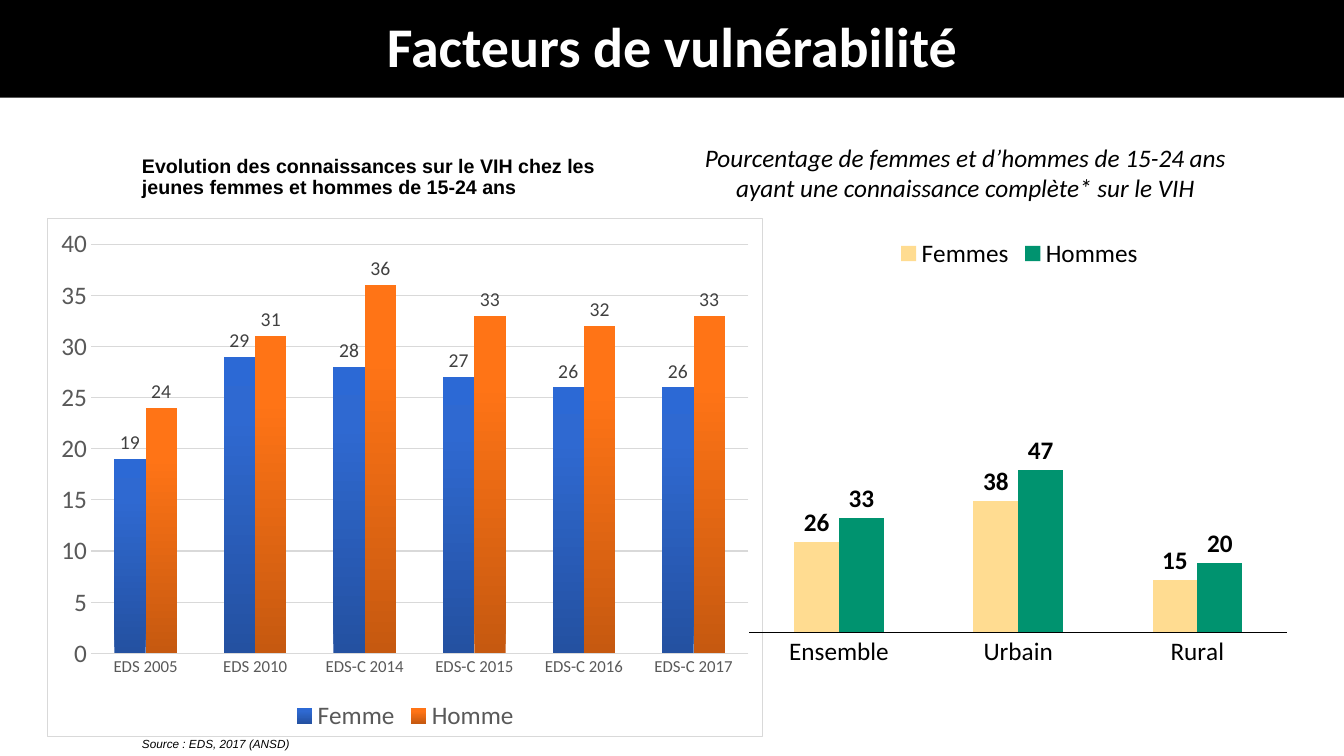
from copy import deepcopy
from pptx import Presentation
from pptx.chart.data import CategoryChartData
from pptx.dml.color import RGBColor
from pptx.enum import chart as kinds, text
from pptx.oxml import parse_xml
from pptx.oxml.ns import nsdecls
from pptx.util import Inches, Pt

TITLE = "Facteurs de vulnérabilité"
TEXTS = [
    dict(words="Evolution des connaissances sur le VIH chez les jeunes femmes et hommes de 15-24 ans",
         at=(1.31, 1.36, 5.26, 1.02), inset=0.19, size=14, font="Arial", bold=True, spacing=0.9),
    dict(words="Source\u00a0: EDS, 2017 (ANSD)", at=(1.31, 7.26, 2.28, 0.24),
         size=8.4, font="Arial", italic=True, spacing=Pt(10.1), after=5.1),
    dict(words="Pourcentage de femmes et d’hommes de 15-24 ans ayant une connaissance complète* sur le VIH",
         at=(6.75, 1.36, 5.65, 0.71), size=18, font="Calibri", italic=True, align=text.PP_ALIGN.CENTER),
]
TREND = dict(
    at=(0.47, 2.16, 7.1, 5.15), plot=(0.06, 0.05, 0.92, 0.79), gap=150, top=40,
    legend=kinds.XL_LEGEND_POSITION.BOTTOM, color="595959", category_size=12,
    axis_line=("D9D9D9", 1), label=(14, "404040", False), grid="D9D9D9",
    categories=["EDS 2005", "EDS 2010", "EDS-C 2014", "EDS-C 2015", "EDS-C 2016", "EDS-C 2017"],
    series=[("Femme", [19, 29, 28, 27, 26, 26], ["2451A1", "2F69D1", "2C69D5"]),
            ("Homme", [24, 31, 36, 33, 32, 33], ["C65910", "FF7416", "FF7517"])])
RESIDENCE = dict(
    at=(7.35, 2.24, 5.52, 4.45), plot=(0.015, 0.135, 0.966, 0.771), gap=200, top=100,
    legend=kinds.XL_LEGEND_POSITION.TOP, color="000000", category_size=18,
    axis_line=("000000", 0.75), label=(18, "000000", True), grid=None,
    categories=["Ensemble", "Urbain", "Rural"],
    series=[("Femmes", [26, 38, 15], ["FFDC91"]),
            ("Hommes", [33, 47, 20], ["00936F"])])
GRADIENT_POSITIONS = (0, 0.8, 1)


def rgb(value):
    return RGBColor.from_string(value)


def style(font, size, color, bold=False, italic=False, name="Calibri"):
    font.size, font.name, font.bold, font.italic = Pt(size), name, bold, italic
    font.color.rgb = rgb(color)


def outline(line, color, width):
    line.color.rgb = rgb(color)
    line.width = Pt(width)


def paint(series, colors):
    fill = series.format.fill
    if len(colors) == 1:
        fill.solid()
        fill.fore_color.rgb = rgb(colors[0])
        return
    fill.gradient()
    fill.gradient_angle = 90
    stops = series._element.xpath("./c:spPr/a:gradFill/a:gsLst")[0]
    stops.append(deepcopy(stops[0]))
    for stop, color, position in zip(fill.gradient_stops, colors, GRADIENT_POSITIONS):
        stop.color.rgb = rgb(color)
        stop.position = position


def place_plot(chart, fractions):
    area = chart._chartSpace.chart.plotArea
    for old in area.xpath("./c:layout"):
        area.remove(old)
    modes = '<c:xMode val="edge"/><c:yMode val="edge"/>'
    sizes = "".join(f'<c:{key} val="{value}"/>' for key, value in zip("xywh", fractions))
    area.insert(0, parse_xml(
        f'<c:layout {nsdecls("c")}><c:manualLayout><c:layoutTarget val="inner"/>'
        f'{modes}{sizes}</c:manualLayout></c:layout>'))


def frame(chart, color):
    chart._chartSpace.chart.addnext(parse_xml(
        f'<c:spPr {nsdecls("c", "a")}><a:solidFill><a:srgbClr val="FFFFFF"/></a:solidFill>'
        f'<a:ln w="9525"><a:solidFill><a:srgbClr val="{color}"/></a:solidFill></a:ln></c:spPr>'))


def add_columns(page, content):
    data = CategoryChartData()
    data.categories = content["categories"]
    for name, values, colors in content["series"]:
        data.add_series(name, values)
    chart = page.shapes.add_chart(kinds.XL_CHART_TYPE.COLUMN_CLUSTERED,
                                  *map(Inches, content["at"]), data).chart
    style(chart.font, 10, "000000")
    chart.has_title = False
    chart.has_legend = True
    chart.legend.position = content["legend"]
    chart.legend.include_in_layout = False
    style(chart.legend.font, 18, content["color"])

    plot = chart.plots[0]
    plot.gap_width, plot.overlap, plot.vary_by_categories = content["gap"], 0, False
    for series, (name, values, colors) in zip(plot.series, content["series"]):
        paint(series, colors)
        size, color, bold = content["label"]
        labels = series.data_labels
        labels.show_value = True
        labels.position = kinds.XL_LABEL_POSITION.OUTSIDE_END
        style(labels.font, size, color, bold)

    category, value = chart.category_axis, chart.value_axis
    for axis in (category, value):
        axis.major_tick_mark = axis.minor_tick_mark = kinds.XL_TICK_MARK.NONE
    style(category.tick_labels.font, content["category_size"], content["color"])
    outline(category.format.line, *content["axis_line"])
    value.minimum_scale, value.maximum_scale = 0, content["top"]
    value.has_major_gridlines = value.visible = bool(content["grid"])
    if content["grid"]:
        value.major_unit = 5
        style(value.tick_labels.font, 18, content["color"])
        value.format.line.fill.background()
        outline(value.major_gridlines.format.line, content["grid"], 0.75)
        frame(chart, content["grid"])
    place_plot(chart, content["plot"])


def add_words(page, words, at, size, font, bold=False, italic=False,
              align=text.PP_ALIGN.LEFT, spacing=1.0, after=0, inset=0.05):
    box = page.shapes.add_textbox(*map(Inches, at)).text_frame
    box.word_wrap = True
    box.margin_top = Inches(inset)
    para = box.paragraphs[0]
    para.alignment, para.line_spacing, para.space_after = align, spacing, Pt(after)
    span = para.add_run()
    span.text = words
    style(span.font, size, "000000", bold, italic, font)


def add_title(page):
    title = page.shapes.title
    title.left, title.top, title.width, title.height = map(Inches, (0, 0, 13.33, 0.97))
    title.fill.solid()
    title.fill.fore_color.rgb = rgb("000000")
    title.text_frame.vertical_anchor = text.MSO_ANCHOR.MIDDLE
    para = title.text_frame.paragraphs[0]
    para.alignment, para.line_spacing = text.PP_ALIGN.CENTER, 0.9
    span = para.add_run()
    span.text = TITLE
    style(span.font, 40, "FFFFFF", bold=True)


def main():
    deck = Presentation()
    deck.slide_width, deck.slide_height = Inches(13.33), Inches(7.5)
    page = deck.slides.add_slide(deck.slide_layouts[5])
    add_title(page)
    for content in (TREND, RESIDENCE):
        add_columns(page, content)
    for content in TEXTS:
        add_words(page, **content)
    deck.save("out.pptx")


if __name__ == "__main__":
    main()
